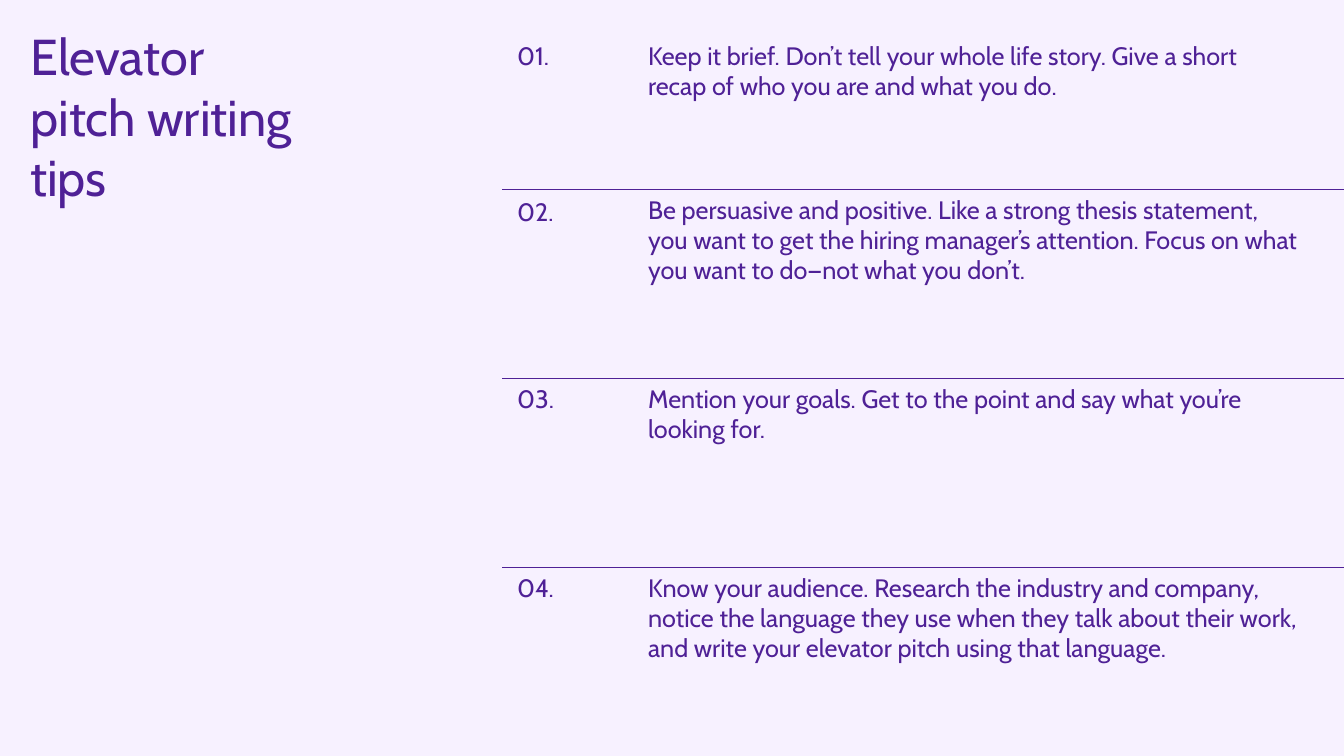
from pptx import Presentation
from pptx.dml.color import RGBColor
from pptx.enum import shapes, text
from pptx.oxml.ns import qn
from pptx.util import Inches, Pt
from lxml import etree

COLORS = {"lavender": "F7F1FF", "violet": "4F2196"}
FONT = "Cabin"
TIPS = [
    "Keep it brief. Don’t tell your whole life story. Give a short recap of who you are "
    "and what you do.",
    "Be persuasive and positive. Like a strong thesis statement, you want to get the hiring "
    "manager’s attention. Focus on what you want to do—not what you don’t.",
    "Mention your goals. Get to the point and say what you’re looking for.",
    "Know your audience. Research the industry and company, notice the language they use "
    "when they talk about their work, and write your elevator pitch using that language.",
]


def write(frame, words, size):
    """Fill a text frame with one left-aligned, top-anchored violet run."""
    frame.word_wrap = True
    frame.auto_size = text.MSO_AUTO_SIZE.NONE
    frame.vertical_anchor = text.MSO_ANCHOR.TOP
    paragraph = frame.paragraphs[0]
    paragraph.alignment = text.PP_ALIGN.LEFT
    run = paragraph.add_run()
    run.text = words
    run.font.name = FONT
    run.font.size = Pt(size)
    run.font.color.rgb = RGBColor.from_string(COLORS["violet"])


deck = Presentation()
deck.slide_width, deck.slide_height = Inches(13.33), Inches(7.5)
slide = deck.slides.add_slide(deck.slide_layouts[5])
slide.background.fill.solid()
slide.background.fill.fore_color.rgb = RGBColor.from_string(COLORS["lavender"])

title = slide.shapes.title
title.left, title.top = Inches(0.2), Inches(0.2)
title.width, title.height = Inches(2.8), Inches(1.92)
write(title.text_frame, "Elevator pitch writing tips", 36)

# Four equal rows; the first starts below the top margin, the others at a rule
row_height = deck.slide_height // len(TIPS)
rule_left = Inches(4.98)
number_left, number_width = Inches(5.03), Inches(1.09)
tip_left, tip_width = Inches(6.33), Inches(6.67)
line_height, padding = Inches(0.3), Inches(0.1)
tip_lines = [3, 4, 2, 3]
number_drop = {1: Inches(0.02)}

for row, (tip, lines) in enumerate(zip(TIPS, tip_lines)):
    top = row * row_height if row else Inches(0.35)
    if row:
        rule = slide.shapes.add_connector(
            shapes.MSO_CONNECTOR.STRAIGHT, rule_left, top, deck.slide_width, top)
        rule.line.color.rgb = RGBColor.from_string(COLORS["violet"])
        rule.line.width = Pt(0.5)
        etree.SubElement(rule._element.spPr, qn("a:effectLst"))

    number = slide.shapes.add_textbox(
        number_left, top + number_drop.get(row, 0), number_width, line_height + padding)
    write(number.text_frame, f"{row + 1:02d}.", 18)

    advice = slide.shapes.add_textbox(
        tip_left, top, tip_width, lines * line_height + padding)
    write(advice.text_frame, tip, 18)

deck.save("out.pptx")
